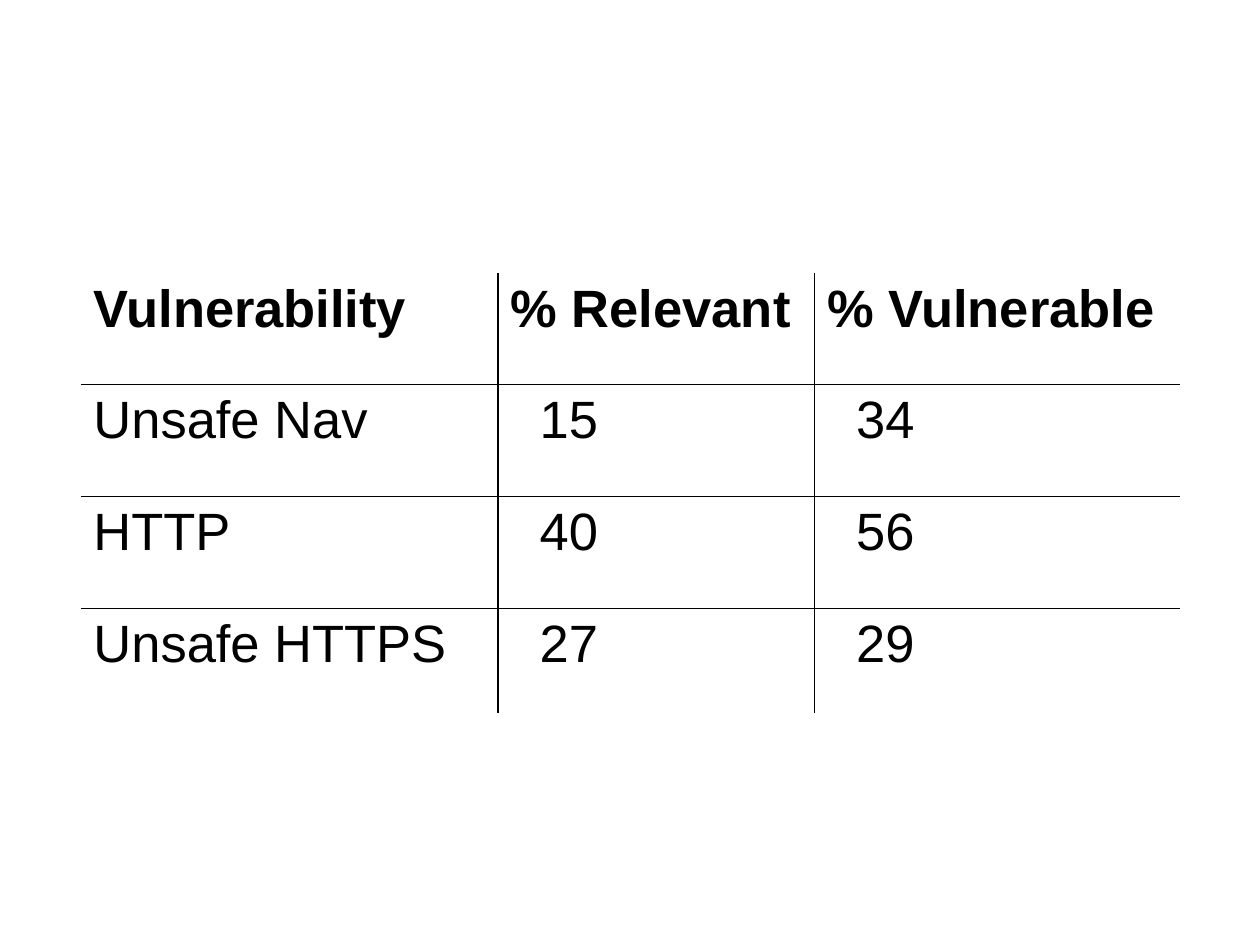
from lxml import etree
from pptx import Presentation
from pptx import util as u
from pptx.dml.color import RGBColor
from pptx.enum import text
from pptx.oxml import ns


def color(value):
    return RGBColor.from_string(value)


class SlideBuilder:
    font = "Arial"
    size = u.Pt(30)
    ink = "000000"
    paper = "FFFFFF"
    rule = u.Pt(1)
    number_indent = u.Cm(0.84)

    def __init__(self, deck):
        self.page = deck.slides.add_slide(deck.slide_layouts[6])
        self.page.background.fill.solid()
        self.page.background.fill.fore_color.rgb = color(self.paper)

    def border(self, cell, side, visible):
        properties = cell._tc.get_or_add_tcPr()
        line = etree.SubElement(properties, ns.qn(f"a:ln{side}"), w=str(self.rule))
        if visible:
            fill = etree.SubElement(line, ns.qn("a:solidFill"))
            etree.SubElement(fill, ns.qn("a:srgbClr"), val=self.ink)
        else:
            etree.SubElement(line, ns.qn("a:noFill"))

    def cell(self, cell, content, heading, number):
        cell.text_frame.text = content
        cell.vertical_anchor = text.MSO_ANCHOR.TOP
        if number:
            cell.margin_left = self.number_indent
        for span in cell.text_frame.paragraphs[0].runs:
            span.font.name = self.font
            span.font.size = self.size
            span.font.bold = heading
            span.font.color.rgb = color(self.ink)

    def table(self, left, top, widths, heights, rows):
        frame = self.page.shapes.add_table(
            len(heights), len(widths), u.Cm(left), u.Cm(top),
            u.Cm(sum(widths)), u.Cm(sum(heights)))
        table = frame.table
        table.first_row = False
        table.horz_banding = False
        for column, width in zip(table.columns, widths):
            column.width = u.Cm(width)
        for row, height in zip(table.rows, heights):
            row.height = u.Cm(height)
        last_row, last_column = len(heights) - 1, len(widths) - 1
        for r, values in enumerate(rows):
            for c, value in enumerate(values):
                cell = table.cell(r, c)
                self.cell(cell, value, heading=r == 0, number=r > 0 and c > 0)
                inner_sides = {"L": c > 0, "R": c < last_column,
                               "T": r > 0, "B": r < last_row}
                for side, visible in inner_sides.items():
                    self.border(cell, side, visible)
                cell.fill.background()


def main():
    deck = Presentation()
    deck.slide_width = u.Cm(25.4)
    deck.slide_height = u.Cm(19.05)
    builder = SlideBuilder(deck)
    builder.table(
        1.63, 5.51,
        widths=[8.41, 6.38, 7.37],
        heights=[2.24, 2.26, 2.26, 2.11],
        rows=[
            ("Vulnerability", "% Relevant", "% Vulnerable"),
            ("Unsafe Nav", "15", "34"),
            ("HTTP", "40", "56"),
            ("Unsafe HTTPS", "27", "29"),
        ])
    deck.save("out.pptx")


if __name__ == "__main__":
    main()
